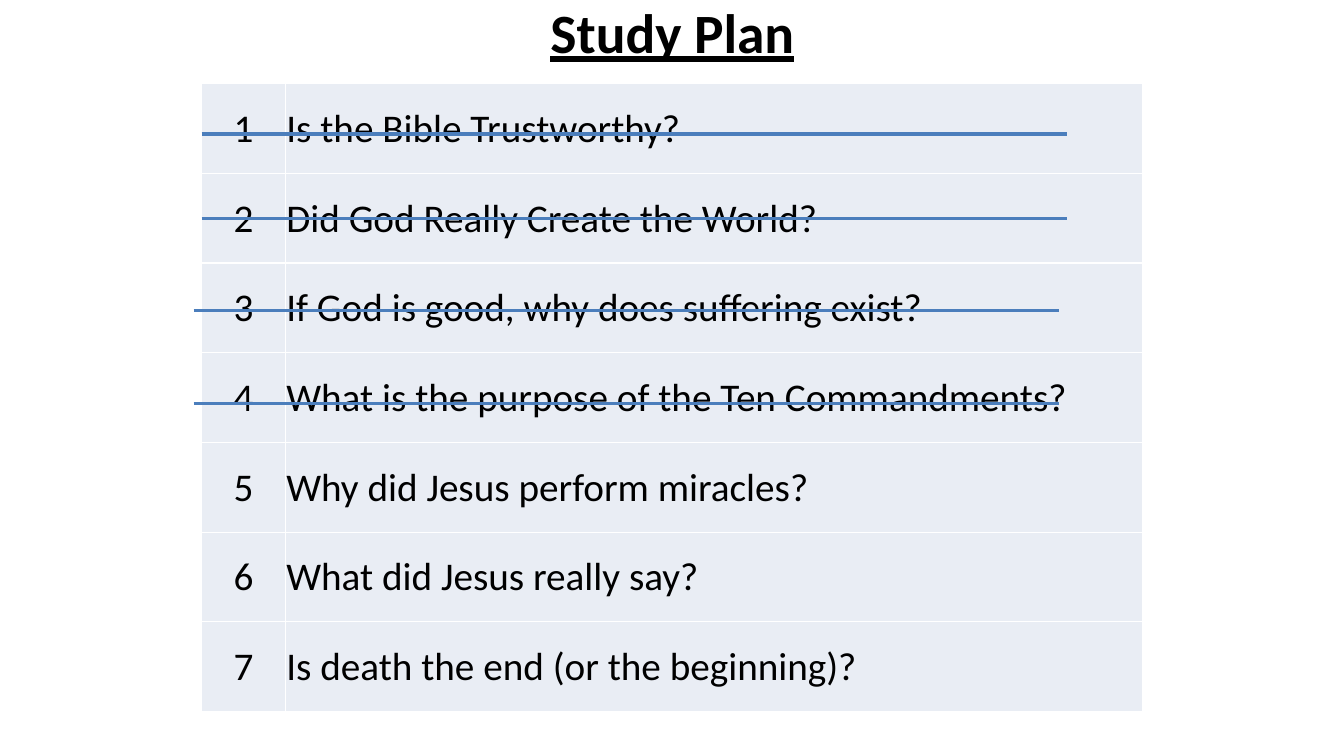
from lxml.etree import SubElement
from pptx import Presentation
from pptx.dml.color import RGBColor
from pptx.enum.shapes import MSO_CONNECTOR
from pptx.enum.text import MSO_ANCHOR, MSO_AUTO_SIZE, PP_ALIGN
from pptx.oxml import parse_xml
from pptx.oxml.ns import nsdecls, qn
from pptx.util import Inches, Pt

COLORS = {"text": "000000", "cell": "E9EDF4", "border": "FFFFFF", "strike": "4B7EBC"}

TOPICS = [
    "Is the Bible Trustworthy?",
    "Did God Really Create the World?",
    "If God is good, why does suffering exist?",
    "What is the purpose of the Ten Commandments?",
    "Why did Jesus perform miracles?",
    "What did Jesus really say?",
    "Is death the end (or the beginning)?",
]
COLUMN_WIDTHS = [0.83, 8.5]
ROW_HEIGHT = 0.89

# Left end and height of the line through each finished topic
STRIKES = [(2, 1.33), (2, 2.17), (1.92, 3.08), (1.92, 4)]
STRIKE_LENGTH = 8.58


class StudyPlanSlide:
    font_name = "Calibri"

    def __init__(self, presentation):
        title_only = presentation.slide_layouts[5]
        self.slide = presentation.slides.add_slide(title_only)

    def color(self, name):
        return RGBColor.from_string(COLORS[name])

    def format_text(self, text_frame, size, alignment, bold=False, underline=False):
        for paragraph in text_frame.paragraphs:
            paragraph.alignment = alignment
            for run in paragraph.runs:
                font = run.font
                font.name, font.size = self.font_name, Pt(size)
                font.bold, font.underline = bold, underline
                font.color.rgb = self.color("text")

    def add_title(self, text, left, top, width, height):
        title = self.slide.shapes.title
        title.left, title.top = Inches(left), Inches(top)
        title.width, title.height = Inches(width), Inches(height)
        text_frame = title.text_frame
        text_frame.text = text
        text_frame.auto_size = MSO_AUTO_SIZE.NONE
        text_frame.vertical_anchor = MSO_ANCHOR.MIDDLE
        self.format_text(text_frame, 39.6, PP_ALIGN.CENTER, bold=True, underline=True)

    def add_topic_table(self, topics, left, top):
        frame = self.slide.shapes.add_table(
            len(topics), len(COLUMN_WIDTHS), Inches(left), Inches(top),
            Inches(sum(COLUMN_WIDTHS)), Inches(ROW_HEIGHT * len(topics)))
        table = frame.table
        table.first_row = table.horz_banding = False
        for column, width in zip(table.columns, COLUMN_WIDTHS):
            column.width = Inches(width)
        for row, (number, topic) in zip(table.rows, enumerate(topics, 1)):
            row.height = Inches(ROW_HEIGHT)
            self.fill_cell(row.cells[0], str(number), PP_ALIGN.CENTER)
            self.fill_cell(row.cells[1], topic, PP_ALIGN.LEFT)

    def fill_cell(self, cell, text, alignment):
        cell.text_frame.text = text
        cell.vertical_anchor = MSO_ANCHOR.MIDDLE
        cell.margin_left = cell.margin_right = cell.margin_top = Inches(0.01)
        cell.margin_bottom = 0
        cell.fill.solid()
        cell.fill.fore_color.rgb = self.color("cell")
        self.format_text(cell.text_frame, 28, alignment)
        # Borders come before the fill in the cell properties
        properties = cell._tc.get_or_add_tcPr()
        for index, side in enumerate("LRTB"):
            properties.insert(index, parse_xml(
                f'<a:ln{side} {nsdecls("a")} w="{Pt(1)}"><a:solidFill>'
                f'<a:srgbClr val="{COLORS["border"]}"/></a:solidFill></a:ln{side}>'))

    def add_strike(self, left, top):
        line = self.slide.shapes.add_connector(
            MSO_CONNECTOR.STRAIGHT, Inches(left), Inches(top),
            Inches(left + STRIKE_LENGTH), Inches(top))
        line.line.color.rgb = self.color("strike")
        line.line.width = Pt(2.25)
        SubElement(line._element.spPr, qn("a:effectLst"))


def main():
    presentation = Presentation()
    presentation.slide_width = Inches(13.33)
    presentation.slide_height = Inches(7.5)

    # Heading and topics
    study_plan = StudyPlanSlide(presentation)
    study_plan.add_title("Study Plan", 2.17, -0.08, 9, 0.78)
    study_plan.add_topic_table(TOPICS, 2, 0.83)

    # Lines through the finished topics
    for left, top in STRIKES:
        study_plan.add_strike(left, top)

    presentation.save("out.pptx")


if __name__ == "__main__":
    main()
